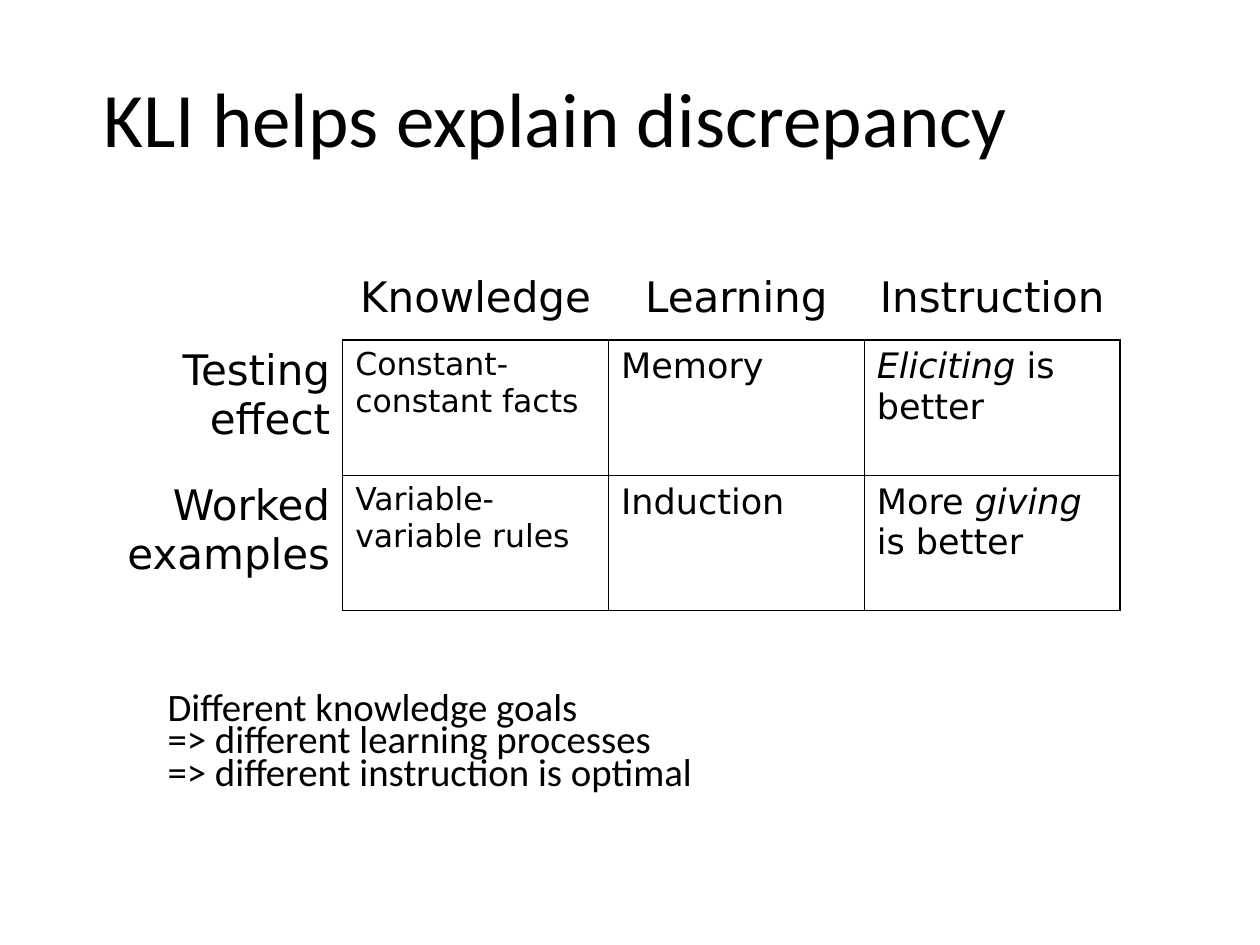
from lxml.etree import SubElement
from pptx import Presentation
from pptx.dml.color import RGBColor
from pptx.enum.text import MSO_ANCHOR as Anchor, PP_ALIGN as Align
from pptx.oxml.ns import qn
from pptx.util import Inches, Pt

COLORS = {"text": "000000", "border": "000000"}
HEADING_FONT = "Calibri"
TABLE_FONT = "DejaVu Sans"
WIDTH, HEIGHT = Inches(10), Inches(7.5)
COLUMNS = [0.196, 0.211, 0.203, 0.203]
ROWS = [0.077, 0.143, 0.143]
CELLS = [
    ["", "Knowledge", "Learning", "Instruction"],
    ["Testing effect", "Constant-constant facts", "Memory", "*Eliciting* is better"],
    ["Worked examples", "Variable-variable rules", "Induction", "More *giving* is better"],
]
CONCLUSION = [
    "Different knowledge goals",
    "=> different learning processes",
    "=> different instruction is optimal",
]


def box(left, top, width, height):
    return int(left * WIDTH), int(top * HEIGHT), int(width * WIDTH), int(height * HEIGHT)


def style(paragraph, name, size):
    paragraph.font.name = name
    paragraph.font.size = Pt(size)
    paragraph.font.color.rgb = RGBColor.from_string(COLORS["text"])


def add_text(slide, bounds, lines, size, anchor=Anchor.TOP, indent=0.1, spacing=1.0):
    frame = slide.shapes.add_textbox(*bounds).text_frame
    frame.word_wrap = True
    frame.vertical_anchor = anchor
    frame.margin_left = Inches(indent)
    paragraph = frame.paragraphs[0]
    paragraph.text = "\v".join(lines)
    paragraph.line_spacing = spacing
    style(paragraph, HEADING_FONT, size)


def set_borders(cell, edges):
    cell.fill.background()
    properties = cell._tc.get_or_add_tcPr()
    for index, (side, drawn) in enumerate(edges.items()):
        line = SubElement(properties, qn(f"a:ln{side}"), w=str(Pt(1)))
        properties.insert(index, line)
        if drawn:
            fill = SubElement(line, qn("a:solidFill"))
            SubElement(fill, qn("a:srgbClr"), val=COLORS["border"])
        else:
            SubElement(line, qn("a:noFill"))


def fill_cell(cell, text, size, alignment):
    paragraph = cell.text_frame.paragraphs[0]
    paragraph.alignment = alignment
    style(paragraph, TABLE_FONT, size)
    for index, part in enumerate(text.split("*")):
        if part:
            run = paragraph.add_run()
            run.text = part
            if index % 2:
                run.font.italic = True


def add_comparison(slide):
    bounds = box(0.076, 0.283, sum(COLUMNS), sum(ROWS))
    table = slide.shapes.add_table(len(ROWS), len(COLUMNS), *bounds).table
    table.first_row = table.horz_banding = False
    for column, share in zip(table.columns, COLUMNS):
        column.width = int(share * WIDTH)
    for row, share in zip(table.rows, ROWS):
        row.height = int(share * HEIGHT)
    for row, texts in enumerate(CELLS):
        for column, text in enumerate(texts):
            cell = table.cell(row, column)
            inside = row > 0 and column > 0
            set_borders(cell, {"L": inside, "R": row > 0, "T": inside, "B": column > 0})
            if inside:
                size, alignment = (18 if column == 1 else 20), Align.LEFT
            else:
                size, alignment = 24, (Align.CENTER if row == 0 else Align.RIGHT)
            fill_cell(cell, text, size, alignment)


def main():
    presentation = Presentation()
    presentation.slide_width, presentation.slide_height = WIDTH, HEIGHT
    slide = presentation.slides.add_slide(presentation.slide_layouts[6])
    add_text(slide, box(0.072, 0.04, 0.868, 0.167), ["KLI helps explain discrepancy"],
             44, anchor=Anchor.MIDDLE)
    add_text(slide, box(0.085, 0.729, 0.85, 0.124), CONCLUSION, 22.2,
             indent=0.48, spacing=0.7)
    add_comparison(slide)
    presentation.save("out.pptx")


if __name__ == "__main__":
    main()
